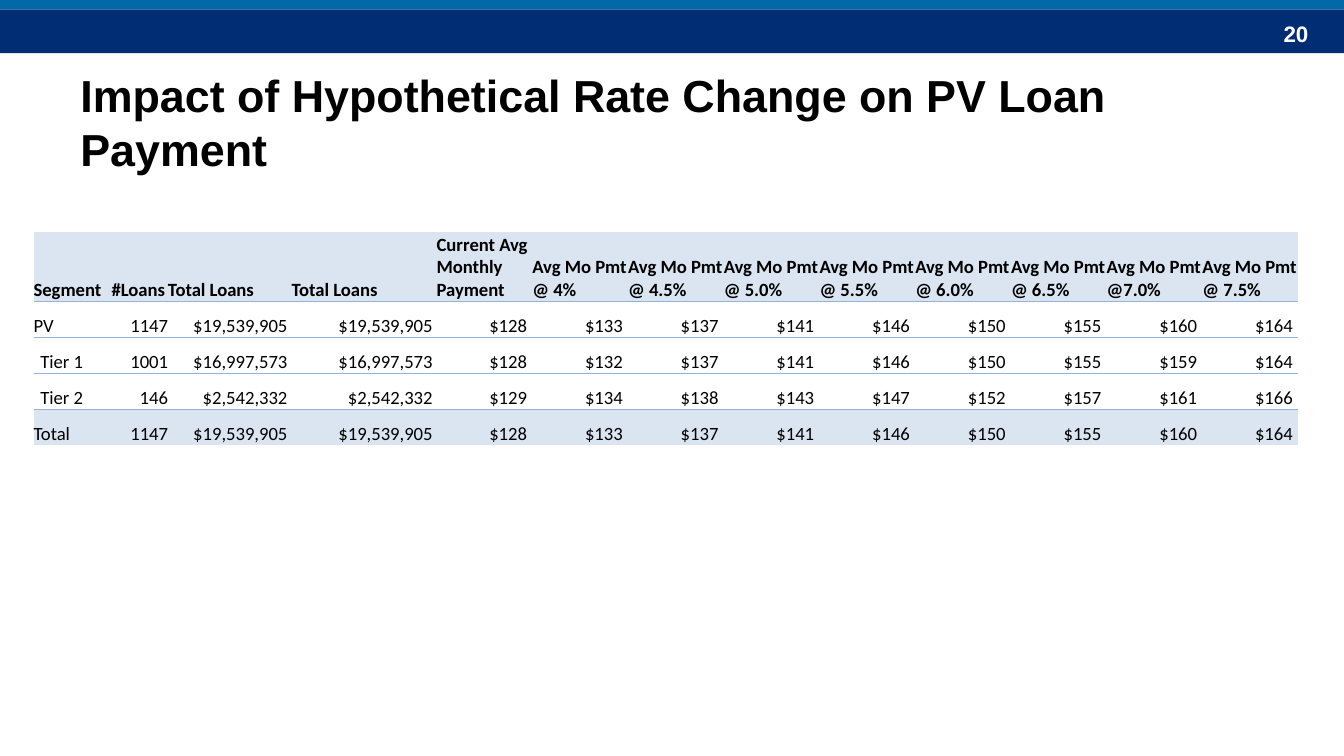
from lxml import etree
from pptx import Presentation
from pptx.dml.color import RGBColor
from pptx.enum.shapes import MSO_SHAPE
from pptx.enum.text import MSO_ANCHOR, PP_ALIGN
from pptx.oxml.ns import qn
from pptx.util import Pt

RECTANGLE = MSO_SHAPE.RECTANGLE
MIDDLE, BOTTOM = MSO_ANCHOR.MIDDLE, MSO_ANCHOR.BOTTOM
LEFT, RIGHT = PP_ALIGN.LEFT, PP_ALIGN.RIGHT

NAVY, BLUE, BLACK, WHITE = "002D73", "0069A6", "000000", "FFFFFF"
BAND, RULE = "DBE5F1", "95B3D7"
PLAIN_TABLE_STYLE = "{2D5ABB26-0587-4C30-8999-92F81FD0307C}"

RATES = ["@ 4%", "@ 4.5%", "@ 5.0%", "@ 5.5%", "@ 6.0%", "@ 6.5%", "@7.0%", "@ 7.5%"]
HEADINGS = ["Segment", "#Loans", "Total Loans", "Total Loans", "Current Avg Monthly Payment"]
HEADINGS += [f"Avg Mo Pmt {rate}" for rate in RATES]
SEGMENTS = [
    ("PV", 1147, 19539905, [128, 133, 137, 141, 146, 150, 155, 160, 164]),
    ("Tier 1", 1001, 16997573, [128, 132, 137, 141, 146, 150, 155, 159, 164]),
    ("Tier 2", 146, 2542332, [129, 134, 138, 143, 147, 152, 157, 161, 166]),
    ("Total", 1147, 19539905, [128, 133, 137, 141, 146, 150, 155, 160, 164]),
]
COLUMN_WIDTHS = [41.8, 30.2, 66.2, 77.8] + [51.3] * 9
ROW_HEIGHTS = [37.2] + [19.3] * 4
BANDED_ROWS = (0, 4)
RULED_ROWS = (0, 1, 3)
FIRST_PAYMENT_COLUMN = 4


def color(hex_string):
    """Turn a hex string into a colour."""
    return RGBColor.from_string(hex_string)


def write(frame, text, size=10, font="Calibri", ink=BLACK, bold=False, align=LEFT):
    """Write one formatted paragraph into a text frame."""
    frame.word_wrap = True
    paragraph = frame.paragraphs[0]
    paragraph.alignment = align
    run = paragraph.add_run()
    run.text = text
    run.font.size = Pt(size)
    run.font.name = font
    run.font.bold = bold
    run.font.color.rgb = color(ink)


def add_bar(slide, top, height, fill):
    """Add a full-width header bar."""
    bar = slide.shapes.add_shape(RECTANGLE, Pt(0), Pt(top), Pt(720), Pt(height))
    bar.shadow.inherit = False
    bar.fill.solid()
    bar.fill.fore_color.rgb = color(fill)
    bar.line.fill.background()


def add_label(slide, text, left, top, width, height, **text_format):
    """Add a vertically centred text box."""
    label = slide.shapes.add_textbox(Pt(left), Pt(top), Pt(width), Pt(height))
    label.text_frame.vertical_anchor = MIDDLE
    write(label.text_frame, text, **text_format)


def add_rule(cell, side):
    """Draw a thin line on one side of a cell."""
    line = etree.SubElement(cell._tc.get_or_add_tcPr(), qn(f"a:{side}"), w=str(Pt(0.5)))
    fill = etree.SubElement(line, qn("a:solidFill"))
    etree.SubElement(fill, qn("a:srgbClr"), val=RULE)


def format_cell(cell, row, column):
    """Set the margins, rules and fill of a cell by its position."""
    inset = 0.7 if row > 0 and column >= FIRST_PAYMENT_COLUMN else 0
    indent = 3.6 if column == 0 and row in (2, 3) else inset
    cell.margin_left, cell.margin_right = Pt(indent), Pt(inset)
    cell.margin_top, cell.margin_bottom = Pt(inset), Pt(0)
    cell.vertical_anchor = BOTTOM
    if row - 1 in RULED_ROWS:
        add_rule(cell, "lnT")
    if row in RULED_ROWS:
        add_rule(cell, "lnB")
    if row in BANDED_ROWS:
        cell.fill.solid()
        cell.fill.fore_color.rgb = color(BAND)
    else:
        cell.fill.background()


def payment_rows():
    """List the table's texts, row by row."""
    rows = [HEADINGS]
    for segment, loans, total, payments in SEGMENTS:
        amounts = [f"${amount:,} " for amount in [total, total, *payments]]
        rows.append([segment, str(loans), *amounts])
    return rows


def add_payment_table(slide, left, top):
    """Add the table of average payments by segment and rate."""
    frame = slide.shapes.add_table(
        len(ROW_HEIGHTS), len(COLUMN_WIDTHS), Pt(left), Pt(top),
        Pt(sum(COLUMN_WIDTHS)), Pt(sum(ROW_HEIGHTS)))
    table = frame.table
    table.horz_banding = False
    table._tbl.tblPr.find(qn("a:tableStyleId")).text = PLAIN_TABLE_STYLE
    for table_column, width in zip(table.columns, COLUMN_WIDTHS):
        table_column.width = Pt(width)
    for table_row, height in zip(table.rows, ROW_HEIGHTS):
        table_row.height = Pt(height)
    for row, texts in enumerate(payment_rows()):
        for column, text in enumerate(texts):
            cell = table.cell(row, column)
            format_cell(cell, row, column)
            align = RIGHT if row > 0 and column > 0 else LEFT
            write(cell.text_frame, text, bold=row == 0, align=align)


def main():
    """Build and save the slide."""
    deck = Presentation()
    deck.slide_width, deck.slide_height = Pt(720), Pt(405)
    slide = deck.slides.add_slide(deck.slide_layouts[6])
    add_bar(slide, 5, 23.5, NAVY)
    add_label(slide, "20", 654, 7, 54, 21.6,
              size=12, font="Arial", ink=WHITE, bold=True, align=RIGHT)
    add_bar(slide, -1.5, 6.5, BLUE)
    add_label(slide, "Impact of Hypothetical Rate Change on PV Loan Payment",
              36, 31.2, 648, 68, size=24, font="Arial", bold=True)
    add_payment_table(slide, 18, 124.3)
    deck.save("out.pptx")


if __name__ == "__main__":
    main()
